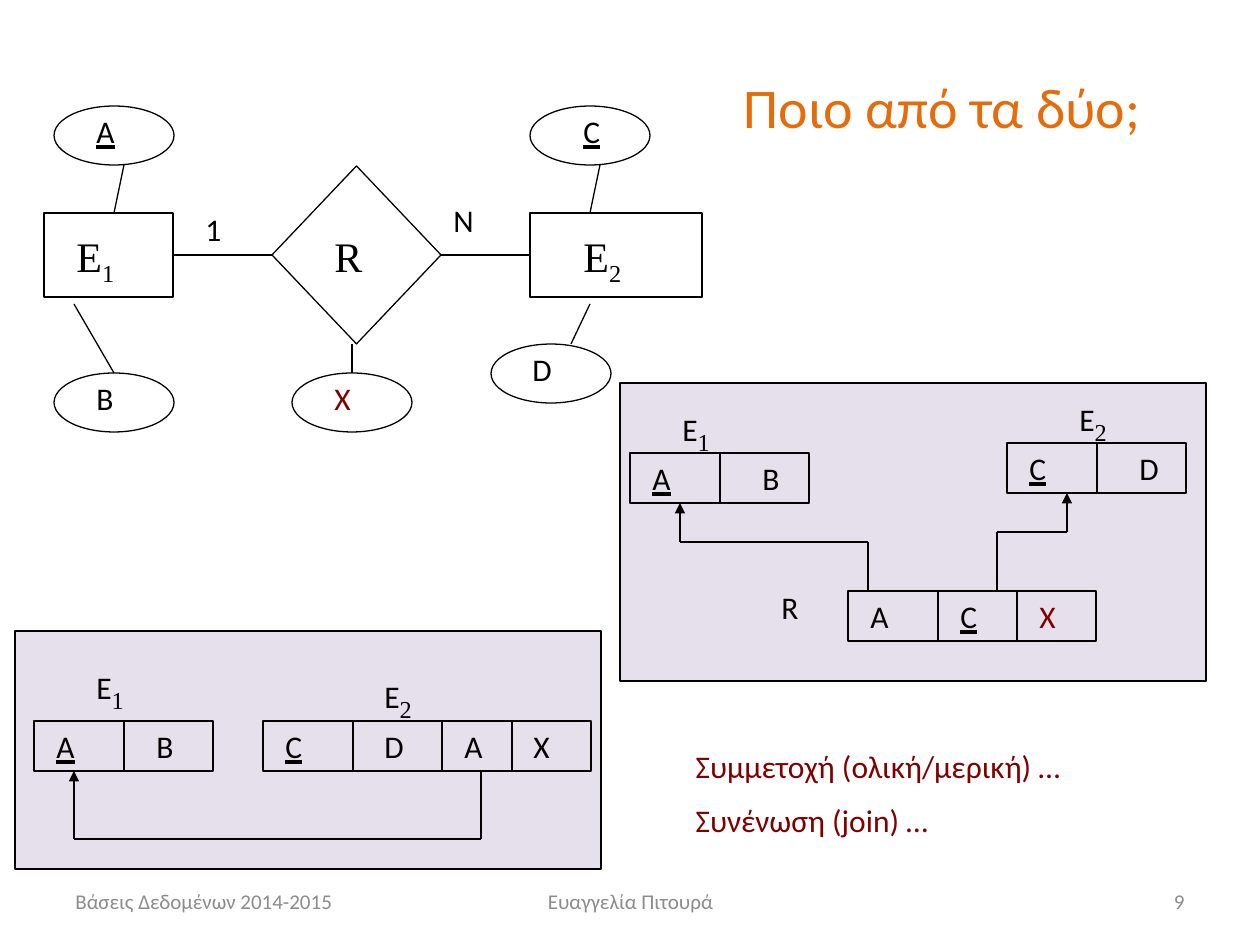
from dataclasses import dataclass
from itertools import pairwise

from lxml import etree
from pptx import Presentation
from pptx.dml.color import RGBColor
from pptx.enum.shapes import MSO_CONNECTOR, MSO_SHAPE
from pptx.enum.text import MSO_ANCHOR, MSO_AUTO_SIZE, PP_ALIGN
from pptx.oxml.ns import qn
from pptx.util import Pt

RECT = MSO_SHAPE.RECTANGLE
BOX = MSO_SHAPE.FLOWCHART_PROCESS
GEM = MSO_SHAPE.FLOWCHART_DECISION
OVAL = MSO_SHAPE.OVAL
LINE = MSO_CONNECTOR.STRAIGHT
TOP, MID = MSO_ANCHOR.TOP, MSO_ANCHOR.MIDDLE
LEFT, CENTER, RIGHT = PP_ALIGN.LEFT, PP_ALIGN.CENTER, PP_ALIGN.RIGHT
GROW, FIXED = MSO_AUTO_SIZE.SHAPE_TO_FIT_TEXT, MSO_AUTO_SIZE.NONE
SCALE = 914400 / 126
ROW = 50


@dataclass(frozen=True)
class Theme:
    ink: str = "000000"
    red: str = "800000"
    orange: str = "E46C0A"
    gray: str = "8C8C8C"
    lilac: str = "E6E0EC"
    sans: str = "Calibri"
    serif: str = "Times New Roman"
    head: int = 32
    big: int = 24
    text: int = 18
    foot: int = 12
    rule: float = 0.75


@dataclass(frozen=True)
class Run:
    text: str
    size: int = Theme.text
    color: str = Theme.ink
    font: str = Theme.sans
    under: bool = False
    sub: bool = False


def emu(*px):
    return [round(v * SCALE) for v in px]


def sub(text):
    return Run(text, Theme.big, font=Theme.serif, sub=True)


def key(text):
    return Run(text, under=True)


def red(text):
    return Run(text, color=Theme.red)


class Board:
    def __init__(self, slide, theme):
        self.slide, self.theme = slide, theme

    def put(self, shape, paras, align=LEFT, anchor=TOP, size=GROW):
        """Fill a shape with paragraphs, each a list of runs."""
        frame = shape.text_frame
        frame.word_wrap, frame.auto_size = True, size
        frame.vertical_anchor = anchor
        for i, runs in enumerate(paras):
            para = frame.add_paragraph() if i else frame.paragraphs[0]
            para.alignment = align
            para.space_before = Pt(self.theme.text / 2 if i else 0)
            for item in runs:
                run = para.add_run()
                run.text = item.text
                font = run.font
                font.size, font.name = Pt(item.size), item.font
                font.color.rgb = RGBColor.from_string(item.color)
                if item.under:
                    font.underline = True
                if item.sub:
                    font._element.set("baseline", "-25000")

    def text(self, x, y, w, h, *runs, **style):
        box = self.slide.shapes.add_textbox(*emu(x, y, w, h))
        self.put(box, [runs], **style)

    def label(self, x, y, *runs, w=90):
        self.text(x, y, w, ROW, *runs)

    def holder(self, idx, x, y, w, h, paras):
        """Move and fill a template placeholder, without bullets."""
        shape = self.slide.placeholders[idx]
        shape.left, shape.top, shape.width, shape.height = emu(x, y, w, h)
        self.put(shape, paras)
        for para in shape.text_frame.paragraphs:
            props = para._p.get_or_add_pPr()
            props.set("marL", "0")
            props.set("indent", "0")
            etree.SubElement(props, qn("a:buNone"))

    def shape(self, kind, x, y, w, h, fill=None):
        shape = self.slide.shapes.add_shape(kind, *emu(x, y, w, h))
        shape.shadow.inherit = False
        if fill:
            shape.fill.solid()
            shape.fill.fore_color.rgb = RGBColor.from_string(fill)
        else:
            shape.fill.background()
        self.stroke(shape.line)
        return shape

    def stroke(self, line):
        line.color.rgb = RGBColor.from_string(self.theme.ink)
        line.width = Pt(self.theme.rule)

    def line(self, start, end, begin=None, finish=None, arrow=False):
        """Draw a line; begin and finish are (shape, site) joints."""
        link = self.slide.shapes.add_connector(LINE, *emu(*start, *end))
        self.stroke(link.line)
        props = link._element.spPr
        if arrow:
            etree.SubElement(props.find(qn("a:ln")), qn("a:tailEnd"), type="triangle")
        etree.SubElement(props, qn("a:effectLst"))
        if begin:
            link.begin_connect(*begin)
        if finish:
            link.end_connect(*finish)

    def route(self, *points):
        """Draw a bent line that ends in an arrowhead."""
        for start, end in pairwise(points):
            self.line(start, end, arrow=end == points[-1])

    def oval(self, x, y, run, inset):
        oval = self.shape(OVAL, x, y, 120, 59)
        self.label(x + inset, y, run)
        return oval

    def row(self, x, y, *cells):
        """Draw a schema row; a cell is (run, width, text inset)."""
        self.shape(RECT, x, y, sum(w for _, w, _ in cells), ROW)
        for i, (run, w, inset) in enumerate(cells):
            if i:
                self.line((x, y), (x, y + ROW))
            self.label(x + inset, y, run, w=70)
            x += w


def diagram(board):
    big = Theme.big
    one = board.shape(BOX, 44, 213, 129, 84)
    tie = board.shape(GEM, 272, 166, 169, 178)
    two = board.shape(BOX, 530, 213, 172, 84)
    for x, name, tail in ((64, "E", "1"), (322, "R", ""), (571, "E", "2")):
        runs = [Run(name, big, font=Theme.serif)] + [sub(t) for t in tail]
        board.text(x, 224, 120, 63, *runs)
    board.line((173, 255), (272, 255), (one, 3), (tie, 1))
    board.line((441, 255), (530, 255), (tie, 3), (two, 1))
    board.label(193, 204, Run("1"))
    board.label(441, 195, Run("N"))

    board.oval(54, 106, key("A"), 30)
    board.oval(530, 106, key("C"), 41)
    board.oval(491, 344, Run("D"), 29)
    low = board.oval(54, 373, Run("B"), 30)
    mark = board.oval(292, 373, red("X"), 30)
    board.line((124, 165), (114, 213))
    board.line((600, 165), (590, 213))
    board.line((590, 304), (571, 344))
    board.line((74, 304), (114, 373), finish=(low, 0))
    board.line((352, 344), (352, 373), finish=(mark, 0))


def merged(board):
    """Two tables: the relationship folded into E2."""
    board.shape(RECT, 15, 631, 586, 238, Theme.lilac)
    board.label(84, 651, Run("E"), sub("1"))
    board.label(372, 660, Run("E"), sub("2"))
    board.row(34, 721, (key("A"), 90, 10), (Run("B"), 89, 20))
    board.row(263, 721, (key("C"), 90, 10), (Run("D"), 89, 19),
              (Run("A"), 70, 10), (Run("X"), 79, 9))
    board.route((481, 771), (481, 839), (74, 839), (74, 771))


def split(board):
    """Three tables: the relationship kept as its own."""
    board.shape(RECT, 620, 383, 586, 298, Theme.lilac)
    board.label(670, 393, Run("E"), sub("1"))
    board.label(1067, 383, Run("E"), sub("2"))
    board.label(769, 582, Run("R"), w=79)
    board.row(630, 453, (key("A"), 90, 10), (Run("B"), 89, 30))
    board.row(1007, 443, (key("C"), 90, 10), (Run("D"), 89, 30))
    board.row(848, 591, (Run("A"), 90, 10), (key("C"), 79, 10), (red("X"), 79, 10))
    board.route((868, 591), (868, 542), (680, 542), (680, 503))
    board.route((997, 591), (997, 532), (1067, 532), (1067, 493))


def main():
    deck = Presentation()
    deck.slide_width, deck.slide_height = emu(1260, 945)
    theme = Theme()
    board = Board(deck.slides.add_slide(deck.slide_layouts[1]), theme)
    board.holder(0, 731, 66, 455, 81,
                 [[Run("Ποιο από τα δύο;", theme.head, theme.orange)]])
    board.holder(1, 683, 741, 512, 107,
                 [[red("Συμμετοχή (ολική/μερική) …")], [red("Συνένωση (join) …")]])
    merged(board)
    split(board)
    diagram(board)
    for x, w, words, align in ((63, 294, "Βάσεις Δεδομένων 2014-2015", LEFT),
                               (431, 399, "Ευαγγελία Πιτουρά", CENTER),
                               (903, 294, "9", RIGHT)):
        board.text(x, 876, w, ROW, Run(words, theme.foot, theme.gray),
                   align=align, anchor=MID, size=FIXED)
    deck.save("out.pptx")


if __name__ == "__main__":
    main()
